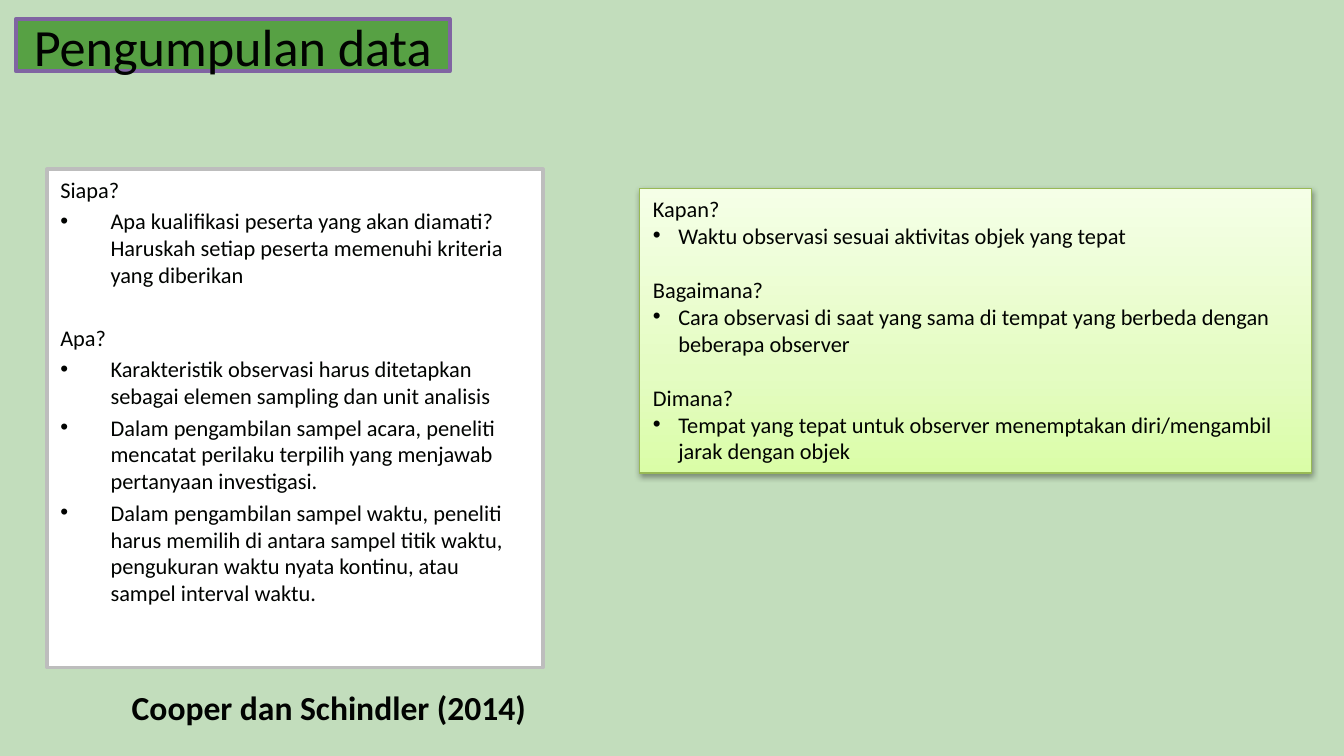
from copy import deepcopy

from lxml.etree import SubElement
from pptx import Presentation
from pptx.dml.color import RGBColor
from pptx.enum.shapes import MSO_SHAPE as Shape
from pptx.enum.text import MSO_ANCHOR as Anchor, MSO_AUTO_SIZE as AutoSize, PP_ALIGN as Align
from pptx.oxml.ns import qn
from pptx.util import Cm, Pt

COLORS = {
    "background": "C2DDBC",
    "text": "010301",
    "title": "57A144",
    "title_border": "8064A2",
    "panel": "FFFFFF",
    "panel_border": "BDBDBD",
    "lime_border": "98B955",
    "shadow": "000000",
}
LIME_STOPS = [(0, "DAFDA7"), (0.35, "E4FCC2"), (1, "F5FFE7")]

WHO_AND_WHAT = [
    ("Siapa?", [
        "Apa kualifikasi peserta yang akan diamati? Haruskah setiap peserta memenuhi kriteria yang diberikan",
    ]),
    ("Apa?", [
        "Karakteristik observasi harus ditetapkan sebagai elemen sampling dan unit analisis",
        "Dalam pengambilan sampel acara, peneliti mencatat perilaku terpilih yang menjawab pertanyaan investigasi.",
        "Dalam pengambilan sampel waktu, peneliti harus memilih di antara sampel titik waktu, "
        "pengukuran waktu nyata kontinu, atau sampel interval waktu.",
    ]),
]
WHEN_HOW_WHERE = [
    ("Kapan?", ["Waktu observasi sesuai aktivitas objek yang tepat"]),
    ("Bagaimana?", [
        "Cara observasi di saat yang sama di tempat yang berbeda dengan beberapa observer",
    ]),
    ("Dimana?", [
        "Tempat yang tepat untuk observer menemptakan diri/mengambil jarak dengan objek",
    ]),
]


def rgb(name):
    return RGBColor.from_string(COLORS[name])


class SlideBuilder:
    font = "Calibri"
    body_size = 12

    def __init__(self, slide):
        self.slide = slide
        background = slide.background.fill
        background.solid()
        background.fore_color.rgb = rgb("background")

    def set_text(self, paragraph, text, size=body_size, bold=False):
        paragraph.text = text
        paragraph.font.name = self.font
        paragraph.font.size = Pt(size)
        paragraph.font.bold = bold
        paragraph.font.color.rgb = rgb("text")

    def panel(self, box, border, border_width, fill=None):
        panel = self.slide.shapes.add_shape(Shape.RECTANGLE, *map(Cm, box))
        panel.shadow.inherit = False
        panel.line.color.rgb = rgb(border)
        panel.line.width = Pt(border_width)
        if fill:
            panel.fill.solid()
            panel.fill.fore_color.rgb = rgb(fill)
        panel.text_frame.word_wrap = True
        return panel

    def title(self, text, box):
        frame = self.panel(box, "title_border", 2, "title").text_frame
        frame.vertical_anchor = Anchor.MIDDLE
        self.set_text(frame.paragraphs[0], text, 28)
        frame.paragraphs[0].alignment = Align.CENTER

    def questions(self, panel, sections, indent, section_gap, item_gap=0):
        frame = panel.text_frame
        frame.vertical_anchor = Anchor.TOP
        for number, (question, answers) in enumerate(sections):
            heading = frame.add_paragraph() if number else frame.paragraphs[0]
            self.set_text(heading, question)
            heading.alignment = Align.LEFT
            heading.space_before = Pt(section_gap if number else 0)
            for answer in answers:
                item = frame.add_paragraph()
                self.set_text(item, answer)
                item.alignment = Align.LEFT
                item.space_before = Pt(item_gap)
                self.bullet(item, indent)

    def bullet(self, paragraph, indent):
        properties = paragraph._p.get_or_add_pPr()
        properties.set("marL", str(Cm(indent)))
        properties.set("indent", str(-Cm(indent)))
        marker_font = properties.makeelement(qn("a:buFont"), {"typeface": "Arial"})
        marker = properties.makeelement(qn("a:buChar"), {"char": "•"})
        defaults = properties.find(qn("a:defRPr"))
        defaults.addprevious(marker_font)
        defaults.addprevious(marker)

    def gradient(self, panel, stops):
        panel.fill.gradient()
        panel.fill.gradient_angle = 90
        stop_list = panel._element.spPr.find(qn("a:gradFill")).find(qn("a:gsLst"))
        while len(stop_list) < len(stops):
            stop_list.append(deepcopy(stop_list[0]))
        for stop, (position, color) in zip(panel.fill.gradient_stops, stops):
            stop.position = position
            stop.color.rgb = RGBColor.from_string(color)

    def drop_shadow(self, panel):
        effects = panel._element.spPr.find(qn("a:effectLst"))
        shadow = SubElement(effects, qn("a:outerShdw"), blurRad=str(Pt(3.1)),
                            dist=str(Pt(1.6)), dir="5400000", rotWithShape="0")
        color = SubElement(shadow, qn("a:srgbClr"), val=COLORS["shadow"])
        SubElement(color, qn("a:alpha"), val="38000")

    def citation(self, text, box):
        frame = self.slide.shapes.add_textbox(*map(Cm, box)).text_frame
        frame.word_wrap = False
        frame.auto_size = AutoSize.SHAPE_TO_FIT_TEXT
        paragraph = frame.paragraphs[0]
        self.set_text(paragraph, text, 18, bold=True)
        paragraph.alignment = Align.JUSTIFY
        paragraph.line_spacing = 1.5
        paragraph._p.get_or_add_pPr().set("marL", str(Cm(0.13)))


def main():
    presentation = Presentation()
    presentation.slide_width, presentation.slide_height = Cm(25.4), Cm(14.29)
    builder = SlideBuilder(presentation.slides.add_slide(presentation.slide_layouts[6]))

    who_panel = builder.panel((0.89, 3.2, 9.37, 9.42), "panel_border", 2, "panel")
    builder.questions(who_panel, WHO_AND_WHAT, indent=0.95, section_gap=19.4, item_gap=2.4)

    builder.title("Pengumpulan data", (0.3, 0.36, 8.2, 0.99))
    builder.citation("Cooper dan Schindler (2014)", (2.11, 12.47, 8.15, 1.3))

    when_panel = builder.panel((12.09, 3.56, 12.7, 5.38), "lime_border", 0.75)
    builder.gradient(when_panel, LIME_STOPS)
    builder.drop_shadow(when_panel)
    builder.questions(when_panel, WHEN_HOW_WHERE, indent=0.48, section_gap=14.6)

    presentation.save("out.pptx")


if __name__ == "__main__":
    main()
